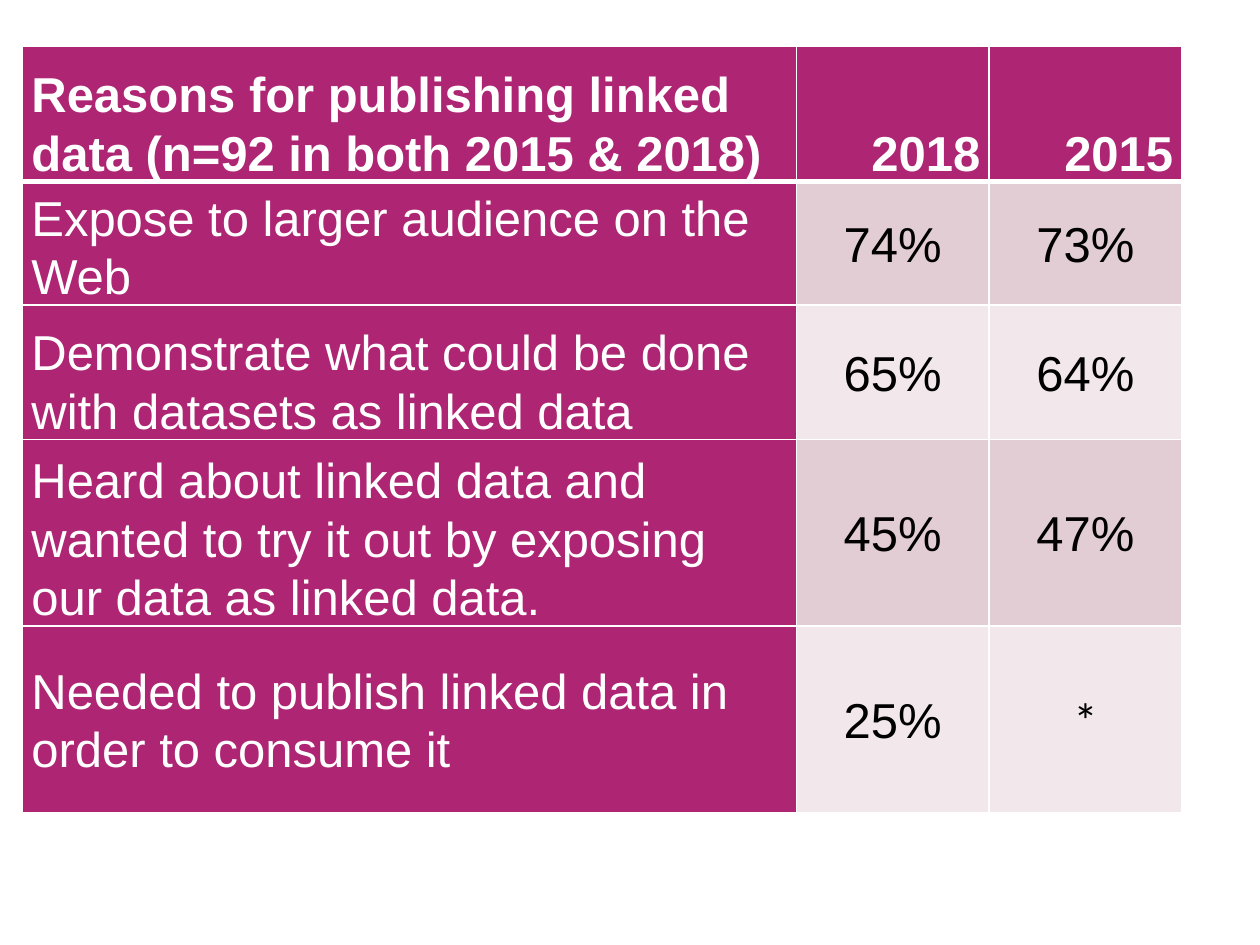
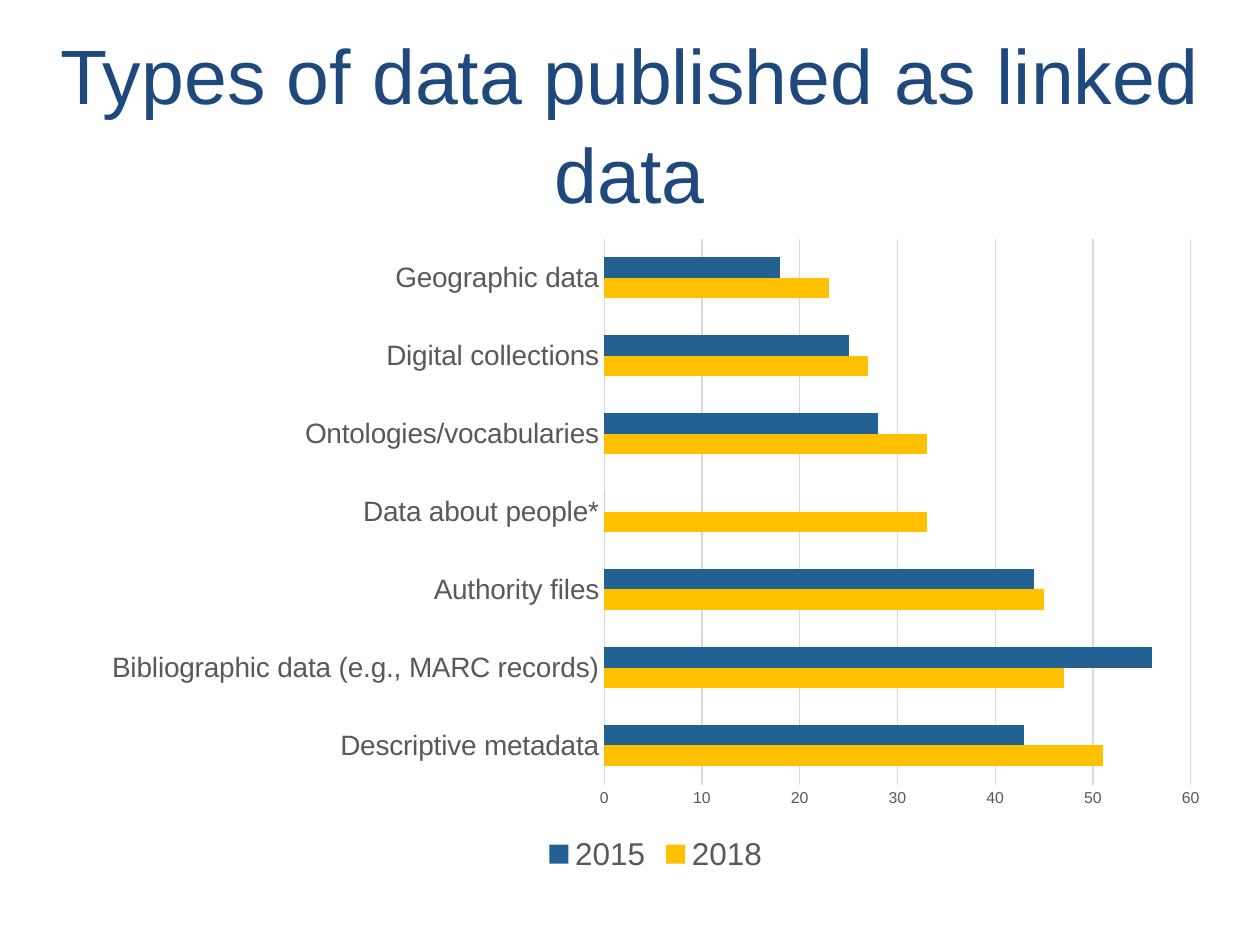
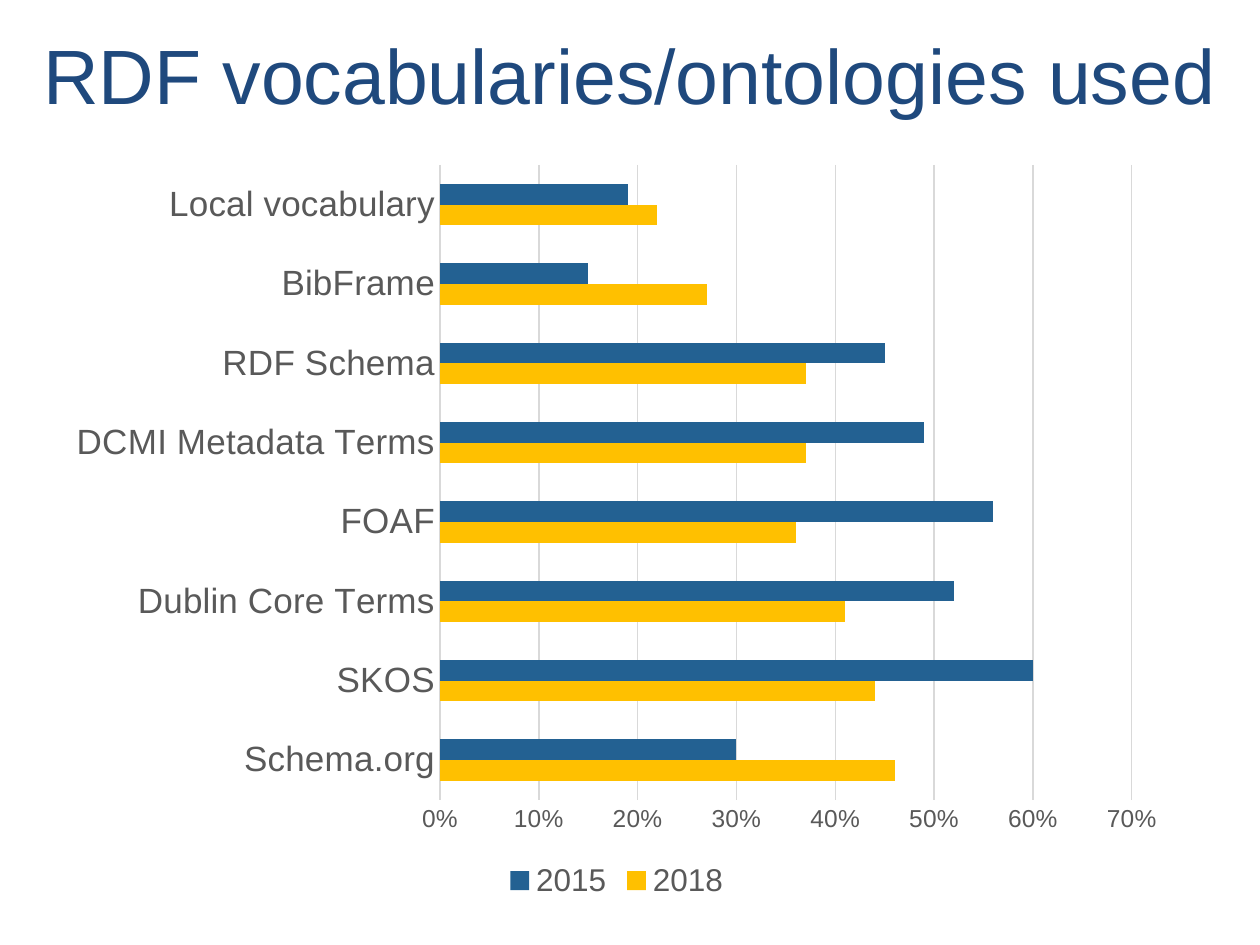
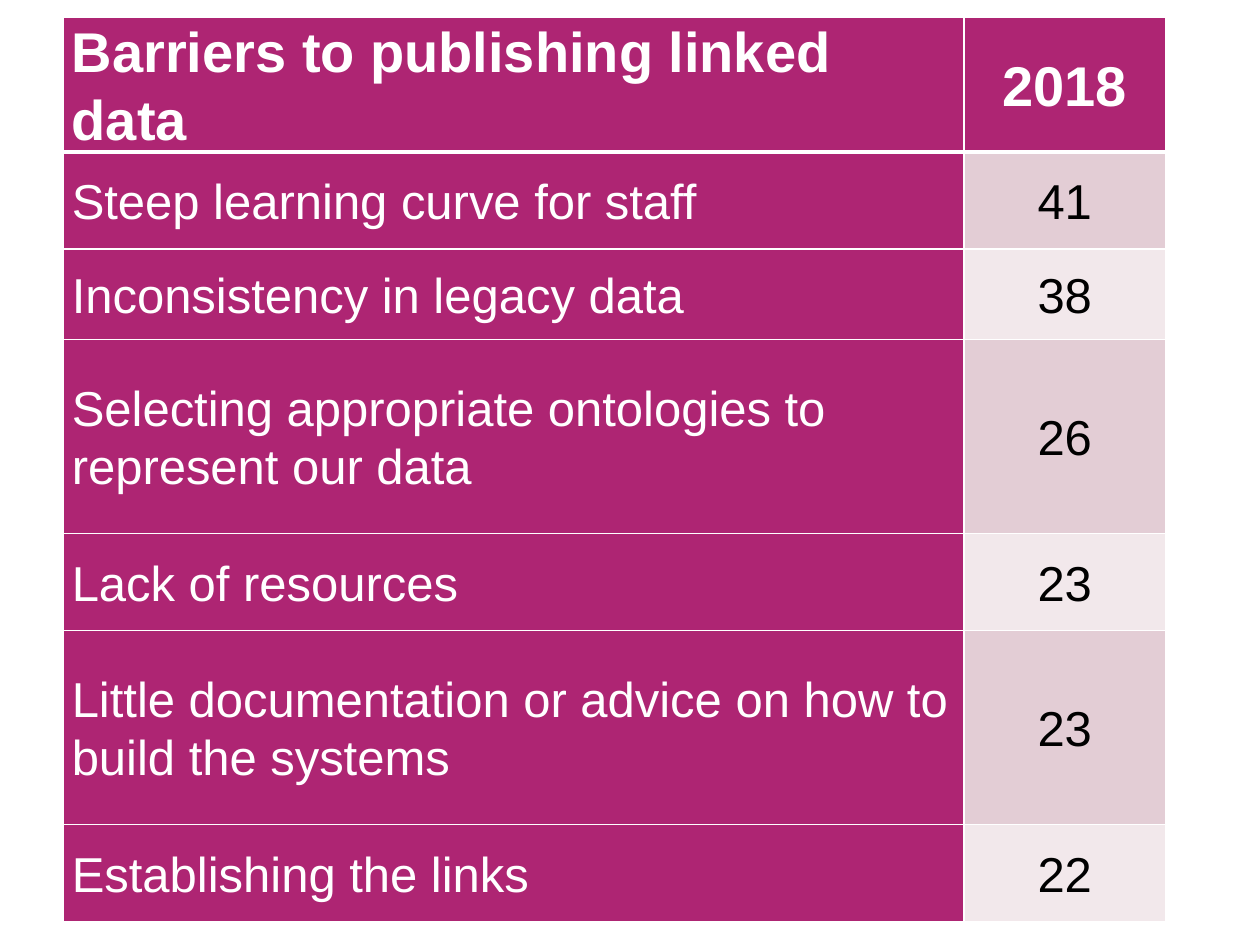
from pptx import Presentation
from pptx.chart.data import CategoryChartData
from pptx.dml.color import RGBColor
from pptx.enum.chart import XL_CHART_TYPE, XL_LEGEND_POSITION, XL_TICK_MARK
from pptx.enum.text import MSO_ANCHOR, MSO_AUTO_SIZE, PP_ALIGN
from pptx.oxml import parse_xml
from pptx.oxml.ns import nsdecls
from pptx.util import Inches, Pt

FONT = "Arial"
WHITE, BLACK = "FFFFFF", "000000"
TITLE_BLUE = "1F497D"
MAGENTA = "AE2573"
BANDS = ("E3CDD5", "F2E8EB")
AXIS_GREY, GRID_GREY = "595959", "D9D9D9"
SERIES_COLORS = {"2018": "FFC000", "2015": "236192"}
LINE_SPACING = 1.07

TOP, MIDDLE, BOTTOM = MSO_ANCHOR.TOP, MSO_ANCHOR.MIDDLE, MSO_ANCHOR.BOTTOM
LEFT, CENTER, RIGHT = PP_ALIGN.LEFT, PP_ALIGN.CENTER, PP_ALIGN.RIGHT
BAR_CLUSTERED = XL_CHART_TYPE.BAR_CLUSTERED
LEGEND_BOTTOM = XL_LEGEND_POSITION.BOTTOM
NO_TICK = XL_TICK_MARK.NONE
TITLE_ONLY, BLANK = 5, 6

# Each row: height, anchor of the label, label, values
REASONS = [
    (1.07, BOTTOM, "Reasons for publishing linked data (n=92 in both 2015 & 2018)", "2018", "2015"),
    (0.98, BOTTOM, "Expose to larger audience on the Web", "74%", "73%"),
    (1.07, BOTTOM, "Demonstrate what could be done with datasets as linked data", "65%", "64%"),
    (1.48, BOTTOM, "Heard about linked data and wanted to try it out by exposing "
                   "our data as linked data.", "45%", "47%"),
    (1.48, MIDDLE, "Needed to publish linked data in order to consume it", "25%", "*"),
]
BARRIERS = [
    (0.77, BOTTOM, "Barriers to publishing linked data", "2018"),
    (0.77, MIDDLE, "Steep learning curve for staff", "41"),
    (0.72, MIDDLE, "Inconsistency in legacy data", "38"),
    (1.54, MIDDLE, "Selecting appropriate ontologies to represent our data", "26"),
    (0.77, MIDDLE, "Lack of resources", "23"),
    (1.54, MIDDLE, "Little documentation or advice on how to build the systems", "23"),
    (0.77, MIDDLE, "Establishing the links", "22"),
]

# Each row: category, 2018, 2015
DATA_TYPES = [
    ("Descriptive metadata", 51, 43),
    ("Bibliographic data (e.g., MARC records)", 47, 56),
    ("Authority files", 45, 44),
    ("Data about people*", 33, 0),
    ("Ontologies/vocabularies", 33, 28),
    ("Digital collections", 27, 25),
    ("Geographic data", 23, 18),
]
VOCABULARIES = [
    ("Schema.org", 0.46, 0.3),
    ("SKOS", 0.44, 0.6),
    ("Dublin Core Terms", 0.41, 0.52),
    ("FOAF", 0.36, 0.56),
    ("DCMI Metadata Terms", 0.37, 0.49),
    ("RDF Schema", 0.37, 0.45),
    ("BibFrame", 0.27, 0.15),
    ("Local vocabulary", 0.22, 0.19),
]


def rgb(color):
    return RGBColor.from_string(color)


def inches(box):
    return [Inches(length) for length in box]


def style_font(font, size, color, bold=False, name=FONT):
    font.name, font.size, font.bold = name, Pt(size), bold
    font.color.rgb = rgb(color)


def add_title(page, text, box):
    title = page.shapes.title
    title.left, title.top, title.width, title.height = inches(box)
    frame = title.text_frame
    frame.text = text
    frame.word_wrap = True
    frame.auto_size = MSO_AUTO_SIZE.NONE
    frame.vertical_anchor = TOP
    para = frame.paragraphs[0]
    para.alignment = CENTER
    para.line_spacing = LINE_SPACING
    style_font(para.font, 44, TITLE_BLUE)


def set_borders(cell, top=1, bottom=1):
    """Draw white borders, with top and bottom widths in points."""
    properties = cell._tc.get_or_add_tcPr()
    widths = {"lnL": 1, "lnR": 1, "lnT": top, "lnB": bottom}
    for index, (side, width) in enumerate(widths.items()):
        properties.insert(index, parse_xml(
            f'<a:{side} {nsdecls("a")} w="{Pt(width)}"><a:solidFill>'
            f'<a:srgbClr val="{WHITE}"/></a:solidFill></a:{side}>'))


def fill_cell(cell, text, fill, anchor, align):
    cell.fill.solid()
    cell.fill.fore_color.rgb = rgb(fill)
    cell.margin_left = cell.margin_right = Inches(0.07)
    cell.margin_top = cell.margin_bottom = 0
    cell.vertical_anchor = anchor
    cell.text = text
    para = cell.text_frame.paragraphs[0]
    para.alignment = align
    para.line_spacing = LINE_SPACING
    return para


def add_survey_table(page, box, widths, rows, header_size, header_anchor, header_align):
    """Add a table with a magenta header and label column and banded values."""
    table = page.shapes.add_table(len(rows), len(widths), *inches(box)).table
    for column, width in zip(table.columns, widths):
        column.width = Inches(width)
    for r, (height, label_anchor, *texts) in enumerate(rows):
        table.rows[r].height = Inches(height)
        is_header = r == 0
        for c, text in enumerate(texts):
            cell = table.cell(r, c)
            is_label = c == 0
            if is_label:
                anchor, align = label_anchor, LEFT
            elif is_header:
                anchor, align = header_anchor, header_align
            else:
                anchor, align = MIDDLE, CENTER
            on_magenta = is_header or is_label
            fill = MAGENTA if on_magenta else BANDS[(r - 1) % 2]
            para = fill_cell(cell, text, fill, anchor, align)
            style_font(para.font, header_size if is_header else 28,
                       WHITE if on_magenta else BLACK, is_header,
                       "Calibri" if text == "*" else FONT)
            set_borders(cell, top=3 if r == 1 else 1, bottom=3 if is_header else 1)


def style_axis(axis, size):
    axis.major_tick_mark = axis.minor_tick_mark = NO_TICK
    style_font(axis.tick_labels.font, size, AXIS_GREY)


def style_line(line):
    line.color.rgb = rgb(GRID_GREY)
    line.width = Pt(0.75)


def add_bar_chart(page, box, rows, category_size, value_size, number_format):
    categories, *columns = zip(*rows)
    data = CategoryChartData(number_format=number_format)
    data.categories = categories
    for name, values in zip(SERIES_COLORS, columns):
        data.add_series(name, values)
    chart = page.shapes.add_chart(BAR_CLUSTERED, *inches(box), data).chart
    style_font(chart.font, 10, BLACK)
    chart.has_title = False

    plot = chart.plots[0]
    plot.gap_width = 182
    plot.vary_by_categories = False
    for series in plot.series:
        series.format.fill.solid()
        series.format.fill.fore_color.rgb = rgb(SERIES_COLORS[series.name])

    style_axis(chart.category_axis, category_size)
    style_line(chart.category_axis.format.line)
    value_axis = chart.value_axis
    style_axis(value_axis, value_size)
    value_axis.format.line.fill.background()
    style_line(value_axis.major_gridlines.format.line)
    value_axis.tick_labels.number_format = number_format
    value_axis.tick_labels.number_format_is_linked = False

    chart.has_legend = True
    chart.legend.position = LEGEND_BOTTOM
    chart.legend.include_in_layout = False
    style_font(chart.legend.font, 18, AXIS_GREY)


def main():
    deck = Presentation()
    deck.slide_width, deck.slide_height = Inches(10), Inches(7.5)

    def add_page(layout):
        return deck.slides.add_slide(deck.slide_layouts[layout])

    add_survey_table(add_page(BLANK), (0.18, 0.37, 9.2, 6.08), (6.14, 1.53, 1.53),
                     REASONS, 28, BOTTOM, RIGHT)

    page = add_page(TITLE_ONLY)
    add_title(page, "Types of data published as linked data", (-0.13, 0.12, 10.26, 1.44))
    add_bar_chart(page, (0.71, 1.79, 8.99, 5.18), DATA_TYPES, 16, 9, "General")

    page = add_page(TITLE_ONLY)
    add_title(page, "RDF vocabularies/ontologies used", (-0.13, 0.12, 10.26, 1.07))
    add_bar_chart(page, (0.43, 1.19, 8.93, 5.99), VOCABULARIES, 20, 14, "0%")

    add_survey_table(add_page(BLANK), (0.5, 0.14, 8.76, 7.22), (7.15, 1.6),
                     BARRIERS, 32, MIDDLE, CENTER)

    deck.save("out.pptx")


if __name__ == "__main__":
    main()
